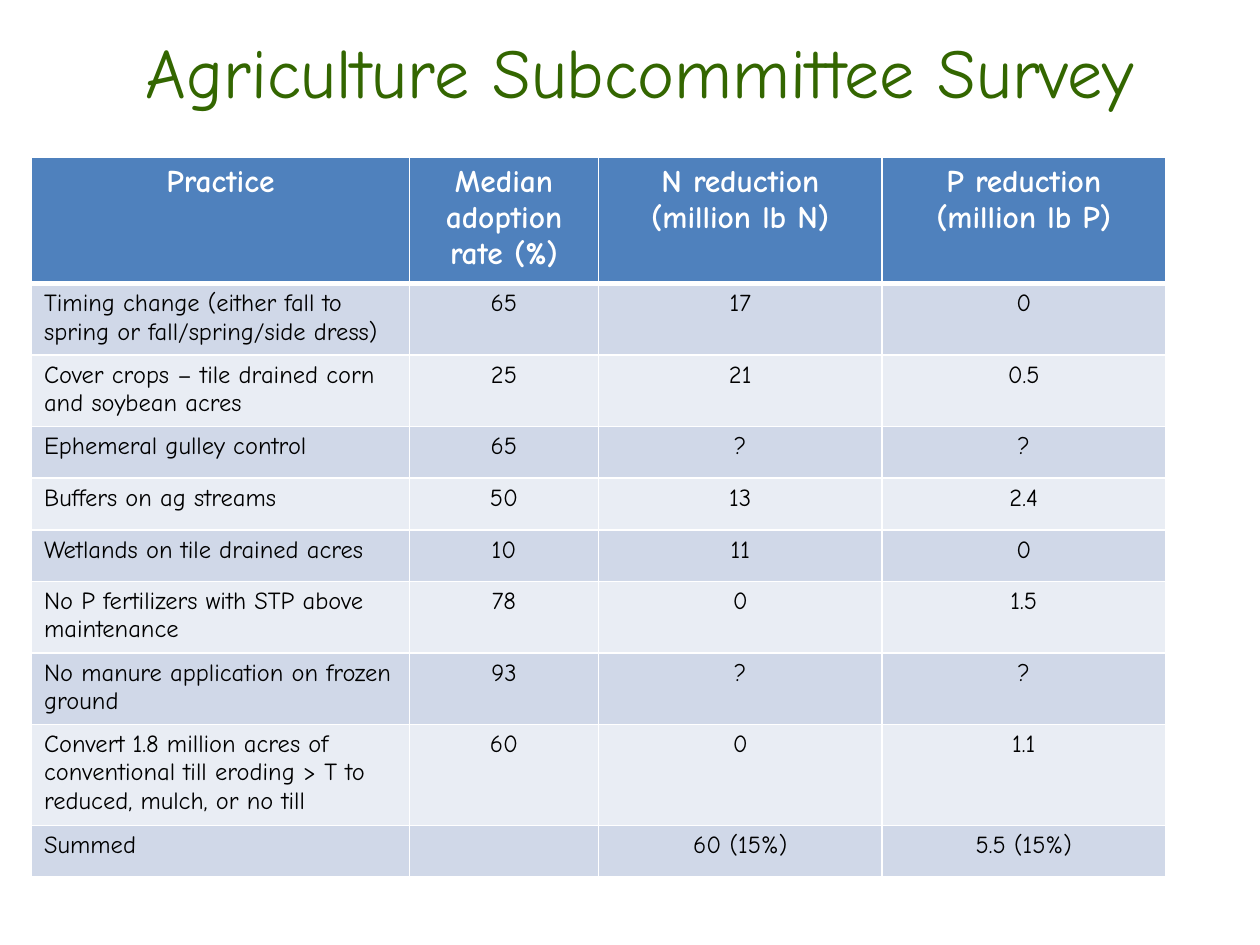
from lxml.etree import SubElement
from pptx import Presentation
from pptx.dml.color import RGBColor
from pptx.enum.text import MSO_ANCHOR, PP_ALIGN
from pptx.oxml.ns import qn
from pptx.util import Inches, Pt

WIDE, HIGH = 10, 7.5
FACE = "Comic Neue"
WHITE, BLACK, GREEN, BLUE = "FFFFFF", "000000", "336600", "4F81BD"
BANDS = ["D0D8E8", "E9EDF4"]

HEAD = {"size": Pt(18), "bold": True, "name": FACE}
BODY = {"size": Pt(14), "bold": False, "name": FACE}
TITLE = {"size": Pt(40), "name": FACE}

UNIT = 0.75
COLS = [4, 2, 3, 3]
ROW = 0.41
ROWS = [
    ("Practice", "Median adoption rate (%)",
     "N reduction (million lb N)", "P reduction (million lb P)"),
    ("Timing change (either fall to spring or fall/spring/side dress)",
     "65", "17", "0"),
    ("Cover crops – tile drained corn and soybean acres", "25", "21", "0.5"),
    ("Ephemeral gulley control", "65", "?", "?"),
    ("Buffers on ag streams", "50", "13", "2.4"),
    ("Wetlands on tile drained acres", "10", "11", "0"),
    ("No P fertilizers with STP above maintenance", "78", "0", "1.5"),
    ("No manure application on frozen ground", "93", "?", "?"),
    ("Convert 1.8 million acres of conventional till eroding > T "
     "to reduced, mulch, or no till", "60", "0", "1.1"),
    ("Summed", "", "60 (15%)", "5.5 (15%)"),
]


def tint(color, code):
    color.rgb = RGBColor.from_string(code)


def write(frame, text, form, code, align):
    para = frame.paragraphs[0]
    para.alignment = align
    if not text:
        return
    run = para.add_run()
    run.text = text
    for key, value in form.items():
        setattr(run.font, key, value)
    run.font.fill.solid()
    tint(run.font.fill.fore_color, code)


def edge(cell, widths):
    """Draw white borders; widths maps L, R, T and B to points."""
    props = cell._tc.get_or_add_tcPr()
    for side, width in widths.items():
        line = SubElement(props, qn(f"a:ln{side}"), w=str(Pt(width)))
        fill = SubElement(line, qn("a:solidFill"))
        SubElement(fill, qn("a:srgbClr"), val=WHITE)


def add_title(slide, text):
    box = slide.shapes.add_textbox(
        Inches(0.12), Inches(0.17), Inches(9.92), Inches(0.78))
    frame = box.text_frame
    frame.word_wrap = True
    frame.vertical_anchor = MSO_ANCHOR.MIDDLE
    write(frame, text, TITLE, GREEN, PP_ALIGN.CENTER)


def add_grid(slide):
    shape = slide.shapes.add_table(
        len(ROWS), len(COLS), Inches(WIDE / 40), Inches(HIGH / 6),
        Inches(UNIT * sum(COLS)), Inches(ROW * len(ROWS)))
    table = shape.table
    for col, span in zip(table.columns, COLS):
        col.width = Inches(UNIT * span)
    for r, texts in enumerate(ROWS):
        table.rows[r].height = Inches(ROW)
        head = r == 0
        form, ink = (HEAD, WHITE) if head else (BODY, BLACK)
        for c, text in enumerate(texts):
            cell = table.cell(r, c)
            edge(cell, {"L": 1, "R": 1, "T": 3 if r == 1 else 1,
                        "B": 3 if head else 1})
            cell.fill.solid()
            tint(cell.fill.fore_color, BLUE if head else BANDS[(r - 1) % 2])
            align = PP_ALIGN.CENTER if head or c else PP_ALIGN.LEFT
            write(cell.text_frame, text, form, ink, align)
    shape.height = Inches(5.92)


def main():
    deck = Presentation()
    deck.slide_width, deck.slide_height = Inches(WIDE), Inches(HIGH)
    slide = deck.slides.add_slide(deck.slide_layouts[6])
    add_title(slide, "Agriculture Subcommittee Survey")
    add_grid(slide)
    deck.save("out.pptx")


if __name__ == "__main__":
    main()
